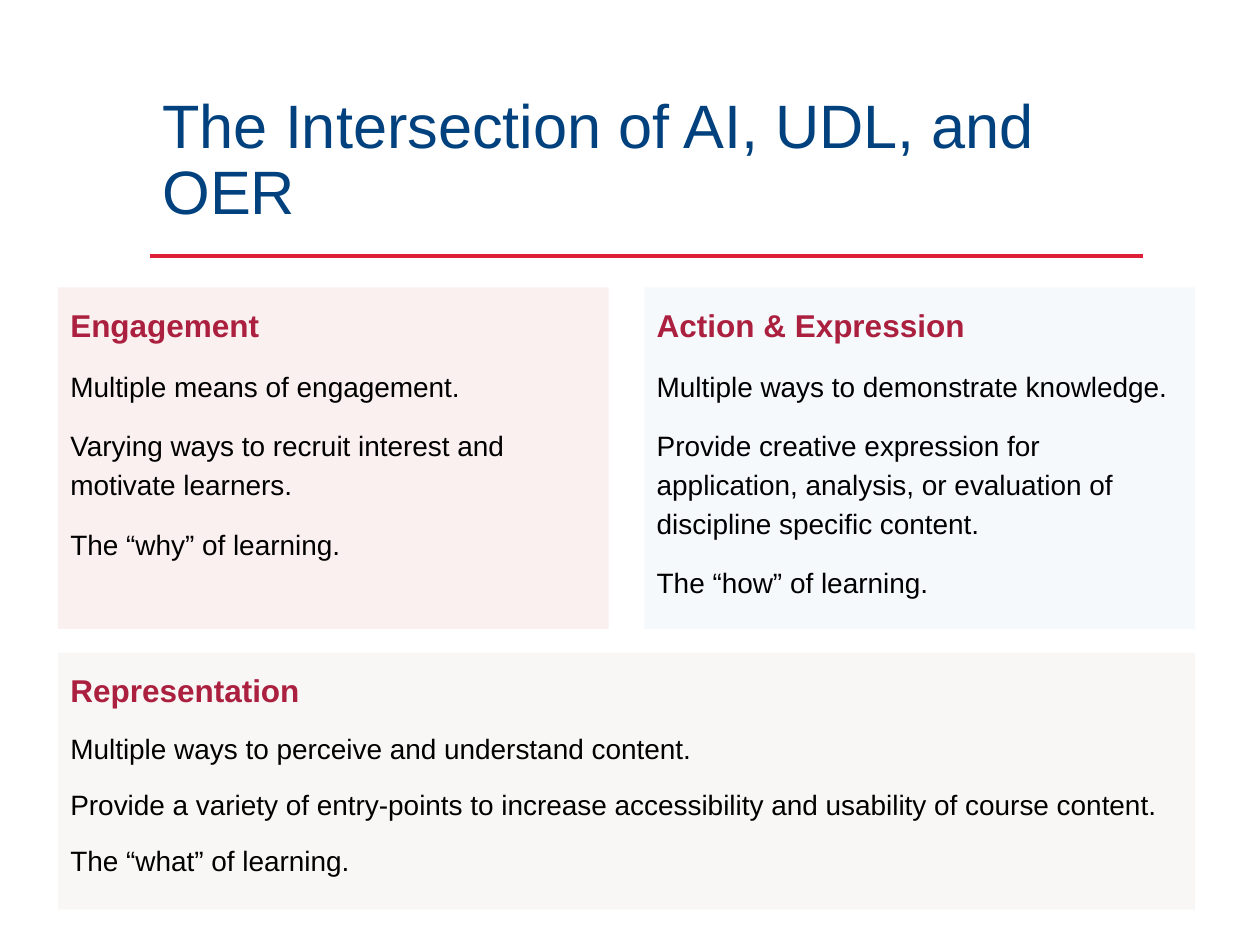
from lxml.etree import SubElement
from pptx import Presentation
from pptx.dml.color import RGBColor
from pptx.enum.shapes import MSO_CONNECTOR, MSO_SHAPE
from pptx.enum.text import MSO_ANCHOR, MSO_AUTO_SIZE, PP_ALIGN
from pptx.oxml.ns import qn
from pptx.util import Pt

FONT = "Arial"
COLORS = {
    "title": "00417E",
    "rule": "DE1F37",
    "heading": "AB1F3F",
    "body": "000000",
    "engagement": "E6B8AF",
    "expression": "CFE2F3",
    "representation": "DFDBD5",
}
LEFT, WIDTH, GAP = 33.1, 649.8, 20.4
CARD_WIDTH = (WIDTH - GAP) / 2
TOP_ROW, TOP_HEIGHT = 164.2, 195.1
BOTTOM_ROW, BOTTOM_HEIGHT = 373, 146.9


def color(name):
    return RGBColor.from_string(COLORS[name])


def add_run(paragraph, text, size, color_name, bold=False):
    run = paragraph.add_run()
    run.text = text
    run.font.name = FONT
    run.font.size = Pt(size)
    run.font.bold = bold
    run.font.color.rgb = color(color_name)


def add_title(slide, text, left, top, width, height):
    """Fill the title placeholder and underline it with the red rule."""
    title = slide.shapes.title
    title.left, title.top = Pt(left), Pt(top)
    title.width, title.height = Pt(width), Pt(height)
    frame = title.text_frame
    frame.word_wrap = True
    frame.auto_size = MSO_AUTO_SIZE.NONE
    frame.vertical_anchor = MSO_ANCHOR.BOTTOM
    frame.margin_left = frame.margin_right = Pt(7.2)
    frame.margin_top = frame.margin_bottom = Pt(3.6)
    paragraph = frame.paragraphs[0]
    paragraph.alignment = PP_ALIGN.LEFT
    paragraph.line_spacing = 0.9
    paragraph.space_before = Pt(0)
    add_run(paragraph, text, 35, "title")

    rule_y = Pt(top + height + 12.2)
    rule = slide.shapes.add_connector(
        MSO_CONNECTOR.STRAIGHT, Pt(left), rule_y, Pt(left + width), rule_y)
    rule.line.color.rgb = color("rule")
    rule.line.width = Pt(2.5)
    SubElement(rule._element.spPr, qn("a:effectLst"))


def add_card(slide, fill, heading, points, left, top, width, height,
             point_gap=12, end_gap=0):
    """Draw a tinted panel with a heading and its points."""
    card = slide.shapes.add_shape(
        MSO_SHAPE.RECTANGLE, Pt(left), Pt(top), Pt(width), Pt(height))
    card.shadow.inherit = False
    card.line.fill.background()
    card.fill.solid()
    card.fill.fore_color.rgb = color(fill)
    tint = card._element.spPr.find(qn("a:solidFill"))[0]
    SubElement(tint, qn("a:alpha"), val="20000")

    frame = card.text_frame
    frame.word_wrap = True
    frame.vertical_anchor = MSO_ANCHOR.TOP
    frame.margin_left = frame.margin_right = Pt(7.2)
    frame.margin_top = frame.margin_bottom = Pt(7.2)
    add_run(frame.paragraphs[0], heading, 18, "heading", bold=True)
    for point in points:
        paragraph = frame.add_paragraph()
        paragraph.space_before = Pt(point_gap)
        add_run(paragraph, point, 16, "body")
    for paragraph in frame.paragraphs:
        paragraph.alignment = PP_ALIGN.LEFT
        paragraph.line_spacing = 1.15
    frame.paragraphs[-1].space_after = Pt(end_gap)


def main():
    prs = Presentation()
    prs.slide_width, prs.slide_height = Pt(720), Pt(540)
    slide = prs.slides.add_slide(prs.slide_layouts[5])

    add_title(slide, "The Intersection of AI, UDL, and OER",
              85.7, 56.2, 567.4, 77.8)
    add_card(slide, "engagement", "Engagement", [
        "Multiple means of engagement.",
        "Varying ways to recruit interest and motivate learners.",
        "The “why” of learning.",
    ], LEFT, TOP_ROW, CARD_WIDTH, TOP_HEIGHT, end_gap=12)
    add_card(slide, "expression", "Action & Expression", [
        "Multiple ways to demonstrate knowledge.",
        "Provide creative expression for application, analysis, "
        "or evaluation of discipline specific content.",
        "The “how” of learning.",
    ], LEFT + CARD_WIDTH + GAP, TOP_ROW, CARD_WIDTH, TOP_HEIGHT, end_gap=12)
    add_card(slide, "representation", "Representation", [
        "Multiple ways to perceive and understand content.",
        "Provide a variety of entry-points to increase accessibility "
        "and usability of course content.",
        "The “what” of learning.",
    ], LEFT, BOTTOM_ROW, WIDTH, BOTTOM_HEIGHT, point_gap=10)

    prs.save("out.pptx")


if __name__ == "__main__":
    main()
